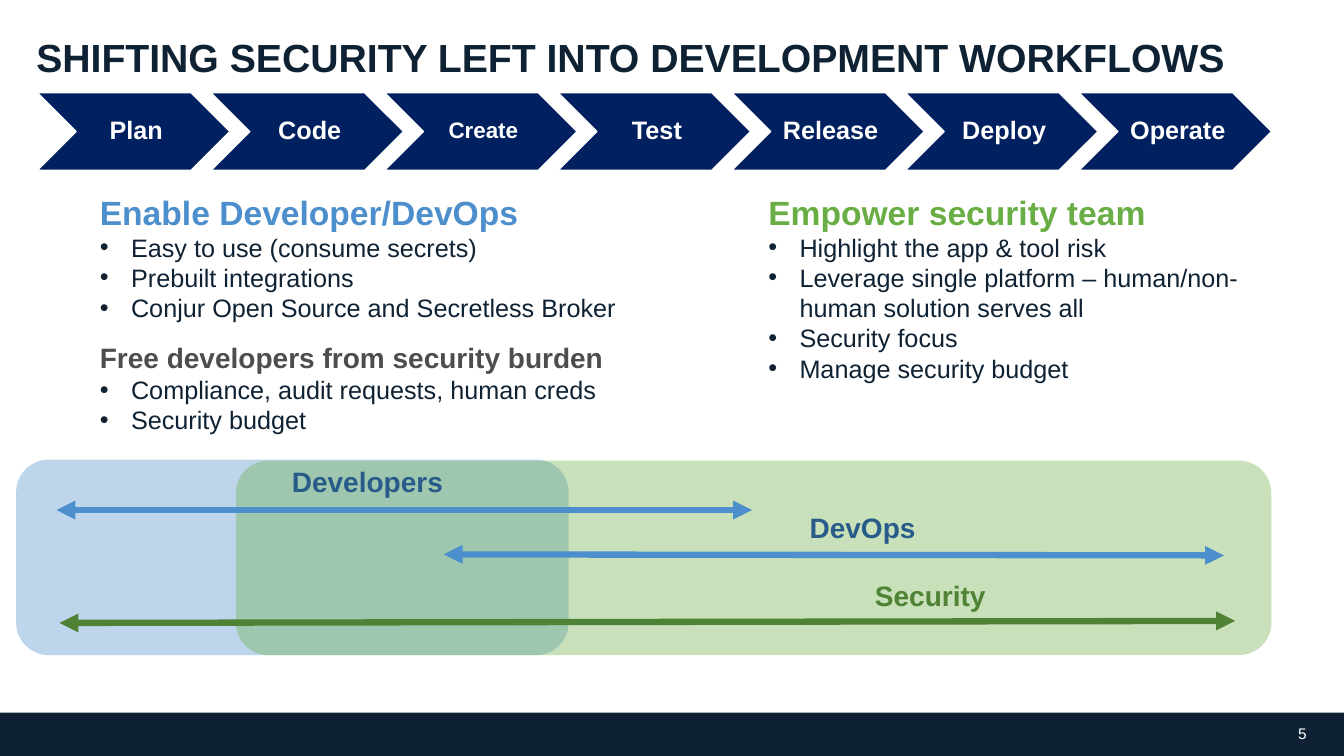
from dataclasses import dataclass

from lxml import etree
from pptx import Presentation
from pptx.dml.color import RGBColor
from pptx.enum import shapes, text
from pptx.oxml import ns
from pptx.util import Inches, Pt


@dataclass(frozen=True)
class Theme:
    font: str = "Arial"
    ink: str = "0F2233"
    white: str = "FFFFFF"
    navy: str = "002060"
    blue: str = "4D8FCC"
    deep_blue: str = "285B89"
    green: str = "69AE45"
    deep_green: str = "4F8234"
    gray: str = "4C4D4C"
    title_size: int = 28
    heading_size: int = 24
    label_size: int = 20
    body_size: int = 18
    small_step_size: int = 16
    number_size: int = 11


THEME = Theme()


def add_xml(parent, tag, **attributes):
    return etree.SubElement(parent, ns.qn(tag), attributes)


def write(paragraph, words, *, size, color, bold=False, align=text.PP_ALIGN.LEFT,
          spacing=1.0, before=0, bullet=None):
    """Fill a paragraph; bullet True or False overrides the list style."""
    paragraph.alignment = align
    paragraph.line_spacing = spacing
    paragraph.space_before = Pt(before)
    paragraph.space_after = Pt(0)
    if bullet is not None:
        properties = paragraph._p.get_or_add_pPr()
        indent = Inches(0.31) if bullet else 0
        properties.set("marL", str(indent))
        properties.set("indent", str(-indent))
        if bullet:
            add_xml(properties, "a:buFont", typeface=THEME.font)
            add_xml(properties, "a:buChar", char="•")
        else:
            add_xml(properties, "a:buNone")
    run = paragraph.add_run()
    run.text = words
    run.font.name = THEME.font
    run.font.size = Pt(size)
    run.font.bold = bold
    run.font.color.rgb = RGBColor.from_string(color)


def set_frame(frame, insets=(0.1, 0.05, 0.1, 0.05), anchor=text.MSO_ANCHOR.TOP, wrap=True):
    frame.auto_size = text.MSO_AUTO_SIZE.NONE
    frame.word_wrap = wrap
    frame.vertical_anchor = anchor
    (frame.margin_left, frame.margin_top,
     frame.margin_right, frame.margin_bottom) = map(Inches, insets)


class SlideBuilder:
    def __init__(self, presentation, theme):
        self.theme = theme
        self.slide = presentation.slides.add_slide(presentation.slide_layouts[3])

    def place(self, shape, box):
        shape.left, shape.top, shape.width, shape.height = map(Inches, box)

    def title(self, words, box):
        shape = self.slide.shapes.title
        self.place(shape, box)
        set_frame(shape.text_frame, (0, 0, 0, 0), text.MSO_ANCHOR.BOTTOM)
        write(shape.text_frame.paragraphs[0], words, size=self.theme.title_size,
              color=self.theme.ink, bold=True, spacing=0.9)

    def column(self, index, box, sections):
        """Fill a body placeholder with (heading, size, color, items) sections."""
        shape = self.slide.placeholders[index]
        self.place(shape, box)
        frame = shape.text_frame
        set_frame(frame)
        for number, (heading, size, color, items) in enumerate(sections):
            paragraph = frame.add_paragraph() if number else frame.paragraphs[0]
            write(paragraph, heading, size=size, color=color, bold=True,
                  before=13 if number else 0, bullet=False)
            for item in items:
                write(frame.add_paragraph(), item, size=self.theme.body_size,
                      color=self.theme.ink, bullet=True)

    def block(self, preset, box, color, alpha=None, outline=None):
        shape = self.slide.shapes.add_shape(preset, *map(Inches, box))
        shape.shadow.inherit = False
        shape.fill.solid()
        shape.fill.fore_color.rgb = RGBColor.from_string(color)
        if alpha is not None:
            fill_color = shape._element.spPr.find(".//" + ns.qn("a:srgbClr"))
            add_xml(fill_color, "a:alpha", val=str(alpha * 1000))
        if outline:
            shape.line.color.rgb = RGBColor.from_string(outline)
            shape.line.width = Pt(1)
        else:
            shape.line.fill.background()
        return shape

    def step(self, words, box, size):
        shape = self.block(shapes.MSO_SHAPE.CHEVRON, box, self.theme.navy,
                           outline=self.theme.white)
        set_frame(shape.text_frame, (0.08, 0.03, 0.03, 0.03), text.MSO_ANCHOR.MIDDLE)
        write(shape.text_frame.paragraphs[0], words, size=size, color=self.theme.white,
              bold=True, align=text.PP_ALIGN.CENTER, spacing=0.9)

    def label(self, words, box, **style):
        shape = self.slide.shapes.add_textbox(*map(Inches, box))
        set_frame(shape.text_frame, wrap=False)
        write(shape.text_frame.paragraphs[0], words, **style)
        return shape

    def span(self, start, end, color):
        """Draw a double-headed arrow."""
        line = self.slide.shapes.add_connector(
            shapes.MSO_CONNECTOR.STRAIGHT, *map(Inches, start + end))
        line.line.color.rgb = RGBColor.from_string(color)
        line.line.width = Pt(4.5)
        outline = line.line._get_or_add_ln()
        add_xml(outline, "a:headEnd", type="triangle")
        add_xml(outline, "a:tailEnd", type="triangle")
        add_xml(line._element.spPr, "a:effectLst")

    def page_number(self, number, box):
        shape = self.label(number, box, size=self.theme.number_size,
                           color=self.theme.white, align=text.PP_ALIGN.RIGHT)
        set_frame(shape.text_frame, (0, 0, 0, 0), text.MSO_ANCHOR.MIDDLE)


def main():
    presentation = Presentation()
    presentation.slide_width = Inches(13.33)
    presentation.slide_height = Inches(7.5)
    builder = SlideBuilder(presentation, THEME)

    builder.block(shapes.MSO_SHAPE.RECTANGLE, (0, 7.07, 13.33, 0.43), THEME.ink)
    builder.page_number("5", (11.73, 7.18, 1.23, 0.2))
    builder.title("SHIFTING SECURITY LEFT INTO DEVELOPMENT WORKFLOWS",
                  (0.36, 0.36, 12.63, 0.44))

    steps = ("Plan", "Code", "Create", "Test", "Release", "Deploy", "Operate")
    for index, name in enumerate(steps):
        size = THEME.small_step_size if name == "Create" else THEME.body_size
        builder.step(name, (0.37 + 1.722 * index, 0.92, 1.91, 0.77), size)

    builder.column(1, (0.89, 1.85, 5.63, 2.6), [
        ("Enable Developer/DevOps", THEME.heading_size, THEME.blue,
         ["Easy to use (consume secrets)", "Prebuilt integrations",
          "Conjur Open Source and Secretless Broker"]),
        ("Free developers from security burden", THEME.label_size, THEME.gray,
         ["Compliance, audit requests, human creds", "Security budget"]),
    ])
    builder.column(2, (7.52, 1.85, 5.1, 2.15), [
        ("Empower security team", THEME.heading_size, THEME.green,
         ["Highlight the app & tool risk",
          "Leverage single platform – human/non-human solution serves all",
          "Security focus", "Manage security budget"]),
    ])

    for box, color in (((0.16, 4.56, 5.48, 1.94), THEME.blue),
                       ((2.34, 4.57, 10.27, 1.93), THEME.green)):
        builder.block(shapes.MSO_SHAPE.ROUNDED_RECTANGLE, box, color, alpha=36)

    roles = (
        ("Developers", (2.82, 4.56), THEME.deep_blue, (0.56, 5.06), (7.46, 5.06), THEME.blue),
        ("DevOps", (7.73, 5.02), THEME.deep_blue, (4.4, 5.5), (12.14, 5.51), THEME.blue),
        ("Security ", (8.44, 5.69), THEME.deep_green, (0.59, 6.18), (12.25, 6.16),
         THEME.deep_green),
    )
    for name, corner, text_color, start, end, line_color in roles:
        builder.span(start, end, line_color)
        builder.label(name, corner + (1.65, 0.5), size=THEME.label_size,
                      color=text_color, bold=True, align=text.PP_ALIGN.CENTER)

    presentation.save("out.pptx")


if __name__ == "__main__":
    main()
